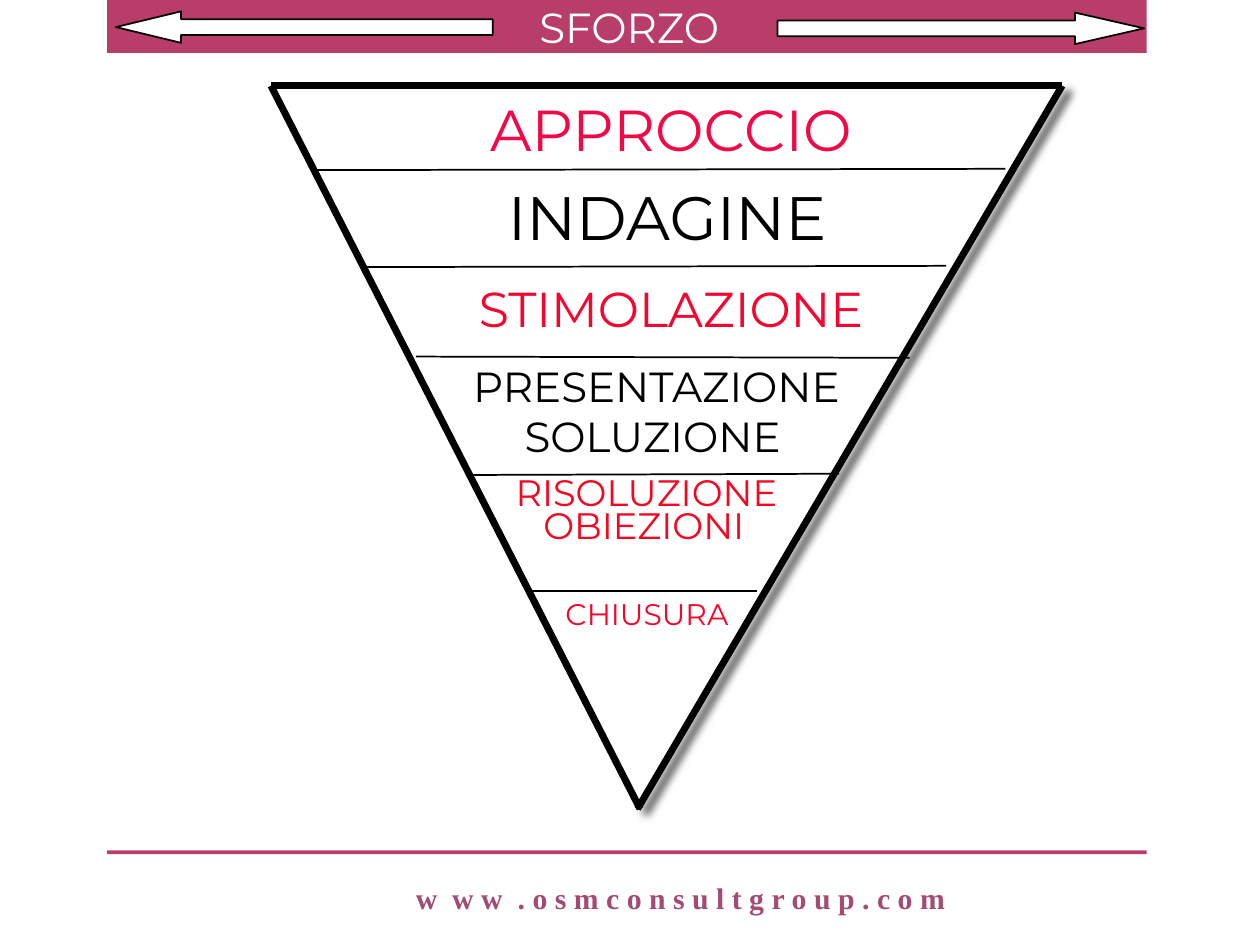
from dataclasses import dataclass
from typing import Optional

from lxml.etree import SubElement
from pptx import Presentation
from pptx.dml.color import RGBColor
from pptx.enum.shapes import MSO_CONNECTOR, MSO_SHAPE
from pptx.enum.text import MSO_ANCHOR, MSO_AUTO_SIZE, PP_ALIGN
from pptx.oxml.ns import qn
from pptx.util import Inches, Pt


@dataclass(frozen=True)
class Theme:
    accent: str = "B83D68"
    footer: str = "A34B73"
    ink: str = "000000"
    paper: str = "FFFFFF"
    heading_font: str = "Montserrat"
    footer_font: str = "Times New Roman"
    title_size: int = 24
    footer_size: int = 17
    edge_width: int = 4
    thin_width: int = 1


@dataclass(frozen=True)
class Stage:
    text: str
    left: float
    top: float
    width: float
    height: float
    size: int
    color: str
    indent: float = 0.06
    spacing: Optional[float] = None


@dataclass(frozen=True)
class Segment:
    x1: float
    y1: float
    x2: float
    y2: float


THEME = Theme()

STAGES = [
    Stage("APPROCCIO", 3.52, 0.7, 3.55, 0.72, 33, "F10847"),
    Stage("INDAGINE", 3.49, 1.38, 3.55, 0.77, 35, THEME.ink),
    Stage("STIMOLAZIONE", 3.52, 2.17, 3.55, 0.63, 28, "F30730"),
    Stage("PRESENTAZIONE SOLUZIONE", 3.45, 2.82, 3.46, 0.99, 24, THEME.ink),
    Stage("RISOLUZIONE OBIEZIONI", 3.88, 3.77, 2.46, 0.81, 21, "F40721", 0.04, 0.75),
    Stage("CHIUSURA", 4.27, 4.69, 1.67, 0.41, 17, "F4072A"),
]
DIVIDERS = [
    Segment(2.49, 1.35, 7.98, 1.34),
    Segment(2.87, 2.12, 7.51, 2.11),
    Segment(3.3, 2.83, 7.22, 2.84),
    Segment(3.71, 3.77, 6.66, 3.76),
    Segment(4.2, 4.69, 6.01, 4.69),
]
TOP_EDGE = Segment(2.15, 0.68, 8.43, 0.68)
LEFT_EDGE = Segment(2.15, 0.68, 5.08, 6.42)
RIGHT_EDGE = Segment(8.43, 0.68, 5.06, 6.42)


def rgb(color: str) -> RGBColor:
    return RGBColor.from_string(color)


def place(shape, left: float, top: float, width: float, height: float) -> None:
    shape.left, shape.top = Inches(left), Inches(top)
    shape.width, shape.height = Inches(width), Inches(height)


def add_filled(page, kind, left, top, width, height, fill: str):
    shape = page.shapes.add_shape(
        kind, Inches(left), Inches(top), Inches(width), Inches(height))
    shape.shadow.inherit = False
    shape.fill.solid()
    shape.fill.fore_color.rgb = rgb(fill)
    shape.line.fill.background()
    return shape


def add_arrow(page, kind, left, top, width, head: float) -> None:
    arrow = add_filled(page, kind, left, top, width, 0.25, THEME.paper)
    arrow.adjustments[0], arrow.adjustments[1] = 0.5, head
    arrow.line.color.rgb = rgb(THEME.ink)
    arrow.line.width = Pt(THEME.thin_width)


def add_line(page, segment: Segment, width: int, shadow: bool = False) -> None:
    line = page.shapes.add_connector(
        MSO_CONNECTOR.STRAIGHT, Inches(segment.x1), Inches(segment.y1),
        Inches(segment.x2), Inches(segment.y2))
    line.line.color.rgb = rgb(THEME.ink)
    line.line.width = Pt(width)
    effects = SubElement(line._element.spPr, qn("a:effectLst"))
    if shadow:
        outer = SubElement(effects, qn("a:outerShdw"), blurRad=str(Pt(5)),
                           dist=str(Pt(5)), dir=str(34 * 60000),
                           algn="ctr", rotWithShape="0")
        tint = SubElement(outer, qn("a:srgbClr"), val=THEME.ink)
        SubElement(tint, qn("a:alpha"), val="75000")


def write(box, text: str, font: str, size: int, color: str, align=PP_ALIGN.LEFT,
          inset: float = 0.04, indent: float = 0.0, bold: bool = False,
          spacing: Optional[float] = None) -> None:
    frame = box.text_frame
    frame.text = text
    frame.word_wrap = True
    frame.auto_size = MSO_AUTO_SIZE.SHAPE_TO_FIT_TEXT
    frame.vertical_anchor = MSO_ANCHOR.TOP
    frame.margin_left = frame.margin_right = Inches(inset)
    frame.margin_top = frame.margin_bottom = Inches(inset)
    para = frame.paragraphs[0]
    para.alignment = align
    para.space_before = Pt(0)
    if spacing:
        para.line_spacing = spacing
    properties = para._p.get_or_add_pPr()
    properties.set("marL", "0")
    properties.set("indent", str(Inches(indent)))
    span = para.runs[0]
    span.font.name = font
    span.font.size = Pt(size)
    span.font.bold = bold
    span.font.color.rgb = rgb(color)


def add_text_box(page, left, top, width, height):
    return page.shapes.add_textbox(
        Inches(left), Inches(top), Inches(width), Inches(height))


def add_stage(page, stage: Stage) -> None:
    box = add_text_box(page, stage.left, stage.top, stage.width, stage.height)
    write(box, stage.text, THEME.heading_font, stage.size, stage.color,
          PP_ALIGN.CENTER, indent=stage.indent, spacing=stage.spacing)


def main() -> None:
    deck = Presentation()
    deck.slide_width, deck.slide_height = Inches(10), Inches(7.5)
    page = deck.slides.add_slide(deck.slide_layouts[5])

    # Header band and footer rule
    for top, height in ((0, 0.42), (6.75, 0.03)):
        add_filled(page, MSO_SHAPE.RECTANGLE, 0.85, top, 8.25, height, THEME.accent)

    # Funnel outline and dividers
    for edge in (TOP_EDGE, LEFT_EDGE):
        add_line(page, edge, THEME.edge_width)
    for divider in DIVIDERS:
        add_line(page, divider, THEME.thin_width)
    add_line(page, RIGHT_EDGE, THEME.edge_width, shadow=True)

    # Stage names
    for stage in STAGES:
        add_stage(page, stage)

    # Title, raised above the header band
    title = page.shapes.title
    place(title, 4.18, -0.03, 1.8, 0.54)
    write(title, "SFORZO", THEME.heading_font, THEME.title_size, THEME.paper,
          indent=0.06)
    title._element.getparent().append(title._element)

    # Effort arrows
    add_arrow(page, MSO_SHAPE.RIGHT_ARROW, 6.17, 0.1, 2.91, 2.19)
    add_arrow(page, MSO_SHAPE.LEFT_ARROW, 0.92, 0.09, 2.99, 2.07)

    # Web address
    footer = add_text_box(page, 3.25, 6.93, 5.58, 0.37)
    write(footer, "w  w w  . o s m c o n s u l t g r o u p . c o m",
          THEME.footer_font, THEME.footer_size, THEME.footer, inset=0.05, bold=True)

    deck.save("out.pptx")


if __name__ == "__main__":
    main()
